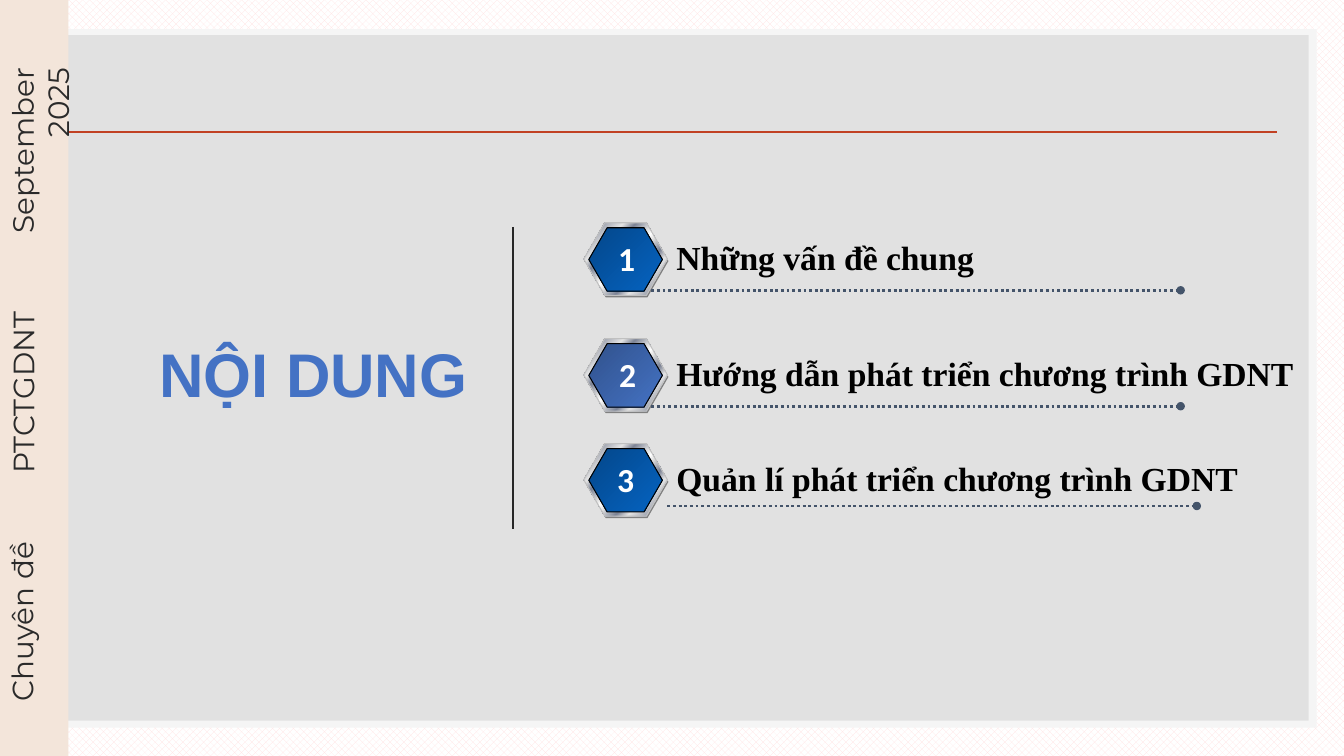
from lxml.etree import SubElement
from pptx import Presentation
from pptx.dml.color import RGBColor
from pptx.enum.dml import MSO_LINE, MSO_PATTERN
from pptx.enum.shapes import MSO_CONNECTOR, MSO_SHAPE
from pptx.enum.text import MSO_ANCHOR, MSO_AUTO_SIZE, PP_ALIGN
from pptx.oxml.ns import qn
from pptx.util import Inches, Pt

WHITE = RGBColor(0xFF, 0xFF, 0xFF)
BLACK = RGBColor(0, 0, 0)
PINK = RGBColor(0xFF, 0xE1, 0xE1)
PALE_GREY = RGBColor(0xF5, 0xF5, 0xF5)
GREY = RGBColor(0x80, 0x80, 0x80)
SILVER = RGBColor(0xC0, 0xC0, 0xC0)
STEEL = RGBColor(0x7D, 0x84, 0x96)
LIGHT = RGBColor(0xE6, 0xE6, 0xE6)
CREAM = RGBColor(0xF3, 0xE5, 0xDA)
CHARCOAL = RGBColor(0x26, 0x26, 0x26)
INK = RGBColor(0x2A, 0x2A, 0x2A)
ORANGE = RGBColor(0xD2, 0x47, 0x26)
SLATE = RGBColor(0x44, 0x54, 0x6A)
BLUE = RGBColor(0x44, 0x72, 0xC4)
DARK_BLUE = RGBColor(0x31, 0x52, 0x8C)
LINK_BLUE = RGBColor(0x05, 0x63, 0xC1)
DEEP_BLUE = RGBColor(0x04, 0x47, 0x8A)

METAL = [(0, LIGHT), (7, STEEL), (26, LIGHT), (34, STEEL), (46, LIGHT), (50, WHITE),
         (54, LIGHT), (66, STEEL), (74, LIGHT), (93, STEEL), (100, LIGHT)]
NAVY = [(0, DEEP_BLUE), (100, LINK_BLUE)]
ROYAL = [(0, DARK_BLUE), (100, BLUE)]


def write(frame, text, *, size, font, color, bold=False, align=PP_ALIGN.LEFT, spacing=None):
    paragraph = frame.paragraphs[0]
    paragraph.alignment = align
    paragraph.line_spacing = spacing
    run = paragraph.add_run()
    run.text = text
    run.font.size = Pt(size)
    run.font.name = font
    run.font.bold = bold
    run.font.color.rgb = color


class AgendaSlide:
    """Holds the agenda's style and its slide, and draws each kind of element."""

    heading = dict(size=44, font="Arial", color=BLUE, bold=True, align=PP_ALIGN.RIGHT, spacing=0.9)
    topic = dict(size=24, font="Times New Roman", color=BLACK, bold=True)
    number = dict(size=24, font="Calibri", color=WHITE, bold=True, align=PP_ALIGN.CENTER)
    side = dict(size=21, font="Montserrat", color=INK, spacing=Pt(25.2))

    def __init__(self, deck):
        self.slide = deck.slides.add_slide(deck.slide_layouts[5])
        self.shapes = self.slide.shapes
        backdrop = self.slide.background.fill
        backdrop.patterned()
        backdrop.pattern = MSO_PATTERN.PERCENT_50
        backdrop.fore_color.rgb = PINK
        backdrop.back_color.rgb = WHITE

    def panel(self, box, color, alpha=None):
        panel = self.shapes.add_shape(MSO_SHAPE.RECTANGLE, *map(Inches, box))
        panel.shadow.inherit = False
        panel.fill.solid()
        panel.fill.fore_color.rgb = color
        panel.line.fill.background()
        if alpha is not None:
            tint = panel.fill._xPr.find(qn("a:solidFill"))[0]
            SubElement(tint, qn("a:alpha"), val=str(alpha * 1000))

    def title(self, text, box):
        title = self.shapes.title
        self.shapes._spTree.append(title._element)
        title.left, title.top, title.width, title.height = map(Inches, box)
        frame = title.text_frame
        frame.auto_size = MSO_AUTO_SIZE.NONE
        frame.vertical_anchor = MSO_ANCHOR.MIDDLE
        write(frame, text, **self.heading)

    def text(self, text, box, style, *, wrap=True, rotation=0, inset=None, **extra):
        holder = self.shapes.add_textbox(*map(Inches, box))
        holder.rotation = rotation
        frame = holder.text_frame
        frame.word_wrap = wrap
        frame.auto_size = MSO_AUTO_SIZE.SHAPE_TO_FIT_TEXT
        if inset is not None:
            frame.margin_left = frame.margin_right = Inches(inset)
            frame.margin_top = frame.margin_bottom = Inches(inset)
        write(frame, text, **{**style, **extra})

    def line(self, start, end, color, width, dotted=False):
        rule = self.shapes.add_connector(MSO_CONNECTOR.STRAIGHT, *map(Inches, start + end))
        rule.line.color.rgb = color
        rule.line.width = Pt(width)
        if dotted:
            rule.line.dash_style = MSO_LINE.ROUND_DOT
            SubElement(rule.line._get_or_add_ln(), qn("a:tailEnd"), type="oval")
        SubElement(rule._element.spPr, qn("a:effectLst"))

    def hexagon(self, group, box, stops, outline=None):
        hexagon = group.shapes.add_shape(MSO_SHAPE.HEXAGON, *map(Inches, box))
        hexagon.adjustments[0] = 0.289
        hexagon.shadow.inherit = False
        if outline is None:
            hexagon.line.fill.background()
        else:
            hexagon.line.color.rgb = outline
            hexagon.line.width = Pt(0.75)
        if len(stops) == 1:
            hexagon.fill.solid()
            hexagon.fill.fore_color.rgb = stops[0][1]
            return
        hexagon.fill.gradient()
        hexagon.fill.gradient_angle = 315
        stop_list = next(hexagon._element.spPr.iter(qn("a:gsLst")))
        for default in list(stop_list):
            stop_list.remove(default)
        for position, color in stops:
            stop = SubElement(stop_list, qn("a:gs"), pos=str(position * 1000))
            SubElement(stop, qn("a:srgbClr"), val=str(color))

    def badge(self, top, face):
        badge = self.shapes.add_group_shape()
        self.hexagon(badge, (5.8, top + 0.02, 0.83, 0.72), [(0, GREY)])
        self.hexagon(badge, (5.79, top, 0.83, 0.72), METAL, SILVER)
        self.hexagon(badge, (5.84, top + 0.05, 0.73, 0.63), face, BLACK)


def main():
    deck = Presentation()
    deck.slide_width, deck.slide_height = Inches(13.33), Inches(7.5)
    agenda = AgendaSlide(deck)

    agenda.panel((0.28, 0.29, 12.78, 6.93), PALE_GREY)
    agenda.line((0.66, 1.31), (12.67, 1.31), ORANGE, 2)
    agenda.panel((0.35, 0.35, 12.63, 6.8), BLACK, alpha=8)
    agenda.title("NỘI DUNG", (0.92, 1.05, 3.82, 5.39))
    agenda.line((5.09, 2.25), (5.09, 5.25), CHARCOAL, 1.5)

    agenda.panel((-0.35, -3, 1.03, 11.62), CREAM)
    side_texts = [
        ("Chuyên đề", -1.15, 5.42, 2.73, PP_ALIGN.LEFT),
        ("September 2025", -0.77, 1.49, 1.98, PP_ALIGN.RIGHT),
        ("PTCTGDNT", -0.81, 3.72, 2.07, PP_ALIGN.CENTER),
    ]
    for text, left, top, width, align in side_texts:
        agenda.text(text, (left, top, width, 0.35), agenda.side,
                    rotation=270, inset=0, align=align)

    topics = [
        ("Những vấn đề chung", 2.21, 4.11, NAVY, 6.03, 6.46, 2.88),
        ("Hướng dẫn phát triển chương trình GDNT", 3.36, 6.99, ROYAL, 6.04, 6.46, 4.03),
        ("Quản lí phát triển chương trình GDNT", 4.4, 6.36, NAVY, 6.02, 6.62, 5.02),
    ]
    for number, (topic, top, width, face, number_left, rule_left, rule_y) in enumerate(topics, 1):
        agenda.badge(top, face)
        agenda.line((rule_left, rule_y), (rule_left + 5.25, rule_y), SLATE, 2, dotted=True)
        agenda.text(topic, (6.61, top + 0.09, width, 0.5), agenda.topic)
        agenda.text(str(number), (number_left, top + 0.1, 0.37, 0.5), agenda.number, wrap=False)

    deck.save("out.pptx")


if __name__ == "__main__":
    main()
